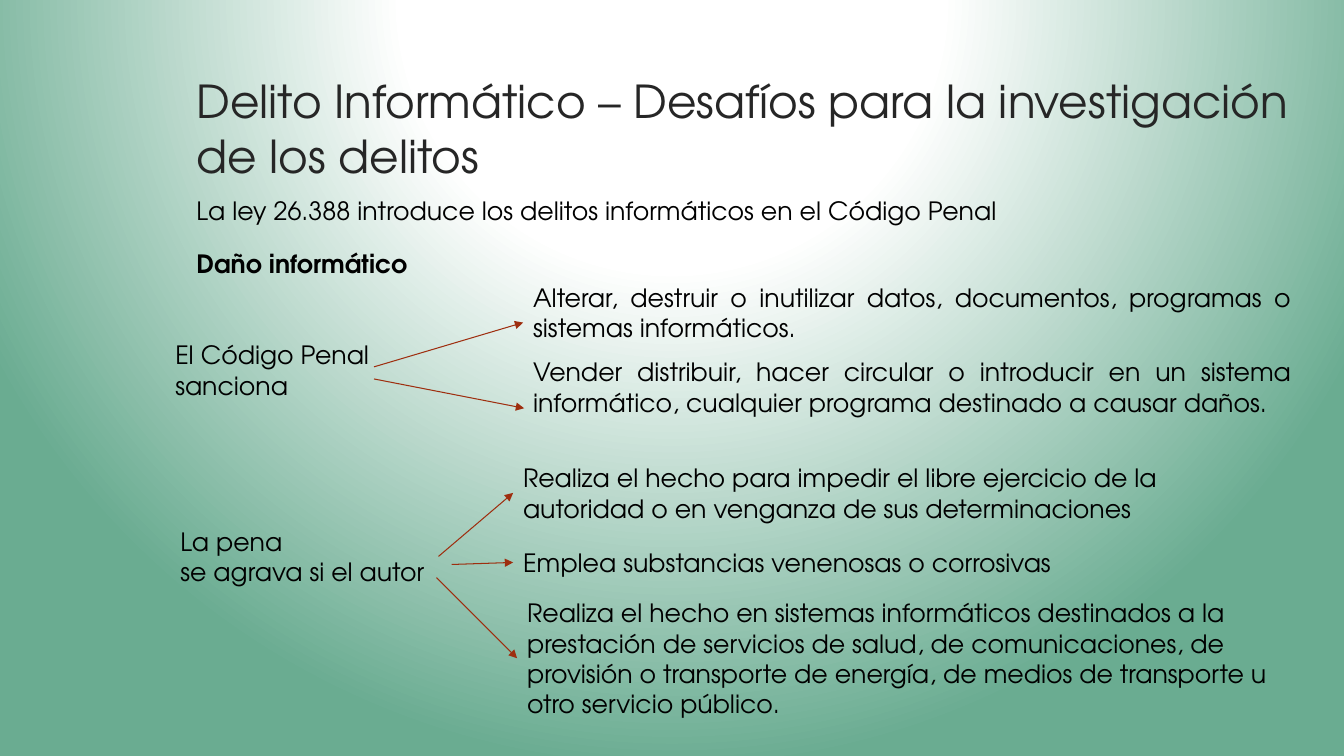
from dataclasses import dataclass

from pptx import Presentation
from pptx import oxml
from pptx import util as u
from pptx.dml import color
from pptx.enum import shapes, text
from pptx.oxml import ns

COLOURS = {"title": "262626", "body": "000000", "arrow": "9E2E0F",
           "glow": "FFFFFF", "edge": "6AAC91"}
FONT = "TeX Gyre Adventor"
WIDTH, HEIGHT = u.Inches(13.33), u.Inches(7.5)

# Positions are percentages of the slide's width and height.
LINE_HEIGHT, INSETS = 4.03, 1.33
HEADING_LEFT, SANCTION_LEFT, AGGRAVATION_LEFT = 13.88, 38.93, 38.18


@dataclass(frozen=True)
class Passage:
    wording: str
    left: float
    top: float
    width: float
    lines: int = 2
    wrap: bool = True
    justified: bool = False
    bold: bool = False
    size: float = 18
    colour: str = "body"


@dataclass(frozen=True)
class Arrow:
    start: tuple[float, float]
    end: tuple[float, float]


PASSAGES = [
    Passage("Delito Informático – Desafíos para la investigación de los delitos",
            HEADING_LEFT, 9.07, 83.87, size=32.4, colour="title"),
    Passage("La ley 26.388 introduce los delitos informáticos en el Código Penal",
            HEADING_LEFT, 25.2, 61.88, wrap=False),
    Passage("Daño informático", HEADING_LEFT, 32.13, 17.33, wrap=False, bold=True),
    Passage("El Código Penal sanciona", 12.3, 44.27, 20.63),
    Passage("Alterar, destruir o inutilizar datos, documentos, programas o "
            "sistemas informáticos.",
            SANCTION_LEFT, 36.67, 57.87, justified=True),
    Passage("Vender distribuir, hacer circular o introducir en un sistema "
            "informático, cualquier programa destinado a causar daños.",
            SANCTION_LEFT, 46.53, 57.9, justified=True),
    Passage("La pena\nse agrava si el autor", 12.68, 68.93, 19.95, wrap=False),
    Passage("Realiza el hecho para impedir el libre ejercicio de la autoridad "
            "o en venganza de sus determinaciones",
            AGGRAVATION_LEFT, 60.53, 57.87),
    Passage("Emplea substancias venenosas o corrosivas",
            AGGRAVATION_LEFT, 71.73, 41.33, lines=1, wrap=False),
    Passage("Realiza el hecho en sistemas informáticos destinados a la prestación "
            "de servicios de salud, de comunicaciones, de provisión o transporte "
            "de energía, de medios de transporte u otro servicio público.",
            38.48, 78.4, 58.66, lines=4),
]

ARROWS = [
    Arrow((27.83, 48.53), (38.93, 42.67)),
    Arrow((27.83, 50.13), (39, 54)),
    Arrow((32.63, 73.6), (38.18, 65.2)),
    Arrow((33.6, 74.67), (38.18, 74.4)),
    Arrow((32.48, 76.4), (38.48, 87.07)),
]


def across(share: float) -> int:
    return round(WIDTH * share / 100)


def down(share: float) -> int:
    return round(HEIGHT * share / 100)


def rgb(role: str) -> color.RGBColor:
    return color.RGBColor.from_string(COLOURS[role])


def paint_background(slide) -> None:
    slide.background.fill.gradient()
    linear = slide.element.find(".//" + ns.qn("a:gradFill"))
    stops = "".join(
        f'<a:gs pos="{share * 1000}"><a:srgbClr val="{COLOURS[role]}"/></a:gs>'
        for share, role in ((0, "glow"), (35, "glow"), (100, "edge")))
    radial = oxml.parse_xml(
        f'<a:gradFill {ns.nsdecls("a")} rotWithShape="1"><a:gsLst>{stops}</a:gsLst>'
        '<a:path path="circle"><a:fillToRect l="50000" t="-80000" r="50000" '
        'b="180000"/></a:path></a:gradFill>')
    linear.getparent().replace(linear, radial)


def add_passage(slide, passage: Passage) -> None:
    line_height = LINE_HEIGHT * passage.size / 18
    frame = slide.shapes.add_textbox(
        across(passage.left), down(passage.top), across(passage.width),
        down(INSETS + passage.lines * line_height)).text_frame
    frame.word_wrap = passage.wrap
    frame.auto_size = text.MSO_AUTO_SIZE.SHAPE_TO_FIT_TEXT
    frame.text = passage.wording
    for paragraph in frame.paragraphs:
        paragraph.alignment = (text.PP_ALIGN.JUSTIFY if passage.justified
                               else text.PP_ALIGN.LEFT)
        paragraph.font.name = FONT
        paragraph.font.size = u.Pt(passage.size)
        paragraph.font.bold = passage.bold
        paragraph.font.color.rgb = rgb(passage.colour)


def add_arrow(slide, arrow: Arrow) -> None:
    connector = slide.shapes.add_connector(
        shapes.MSO_CONNECTOR.STRAIGHT,
        across(arrow.start[0]), down(arrow.start[1]),
        across(arrow.end[0]), down(arrow.end[1]))
    connector.line.color.rgb = rgb("arrow")
    connector.line.width = u.Pt(0.75)
    outline = connector.line._get_or_add_ln()
    outline.append(oxml.parse_xml(f'<a:tailEnd {ns.nsdecls("a")} type="triangle"/>'))
    outline.getparent().append(oxml.parse_xml(f'<a:effectLst {ns.nsdecls("a")}/>'))


def main() -> None:
    deck = Presentation()
    deck.slide_width, deck.slide_height = WIDTH, HEIGHT
    slide = deck.slides.add_slide(deck.slide_layouts[6])
    paint_background(slide)
    for passage in PASSAGES:
        add_passage(slide, passage)
    for arrow in ARROWS:
        add_arrow(slide, arrow)
    deck.save("out.pptx")


if __name__ == "__main__":
    main()
